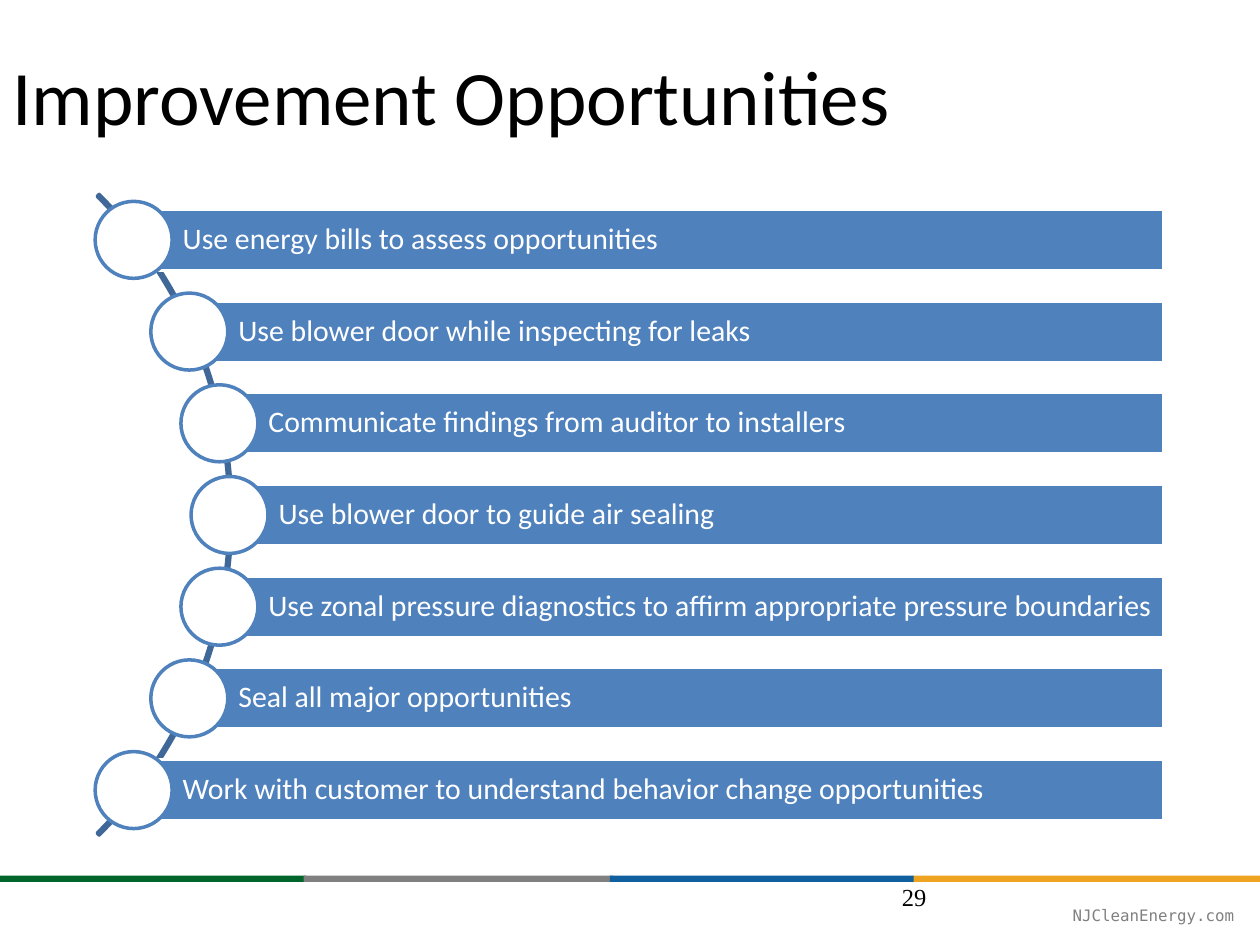
from pptx import Presentation
from pptx.dml.color import RGBColor
from pptx.enum.shapes import MSO_SHAPE
from pptx.enum.text import MSO_ANCHOR, PP_ALIGN
from pptx.util import Pt

RECT, OVAL, ARC = MSO_SHAPE.RECTANGLE, MSO_SHAPE.OVAL, MSO_SHAPE.BLOCK_ARC
TOP, MIDDLE = MSO_ANCHOR.TOP, MSO_ANCHOR.MIDDLE
LEFT, RIGHT = PP_ALIGN.LEFT, PP_ALIGN.RIGHT

TITLE = "Improvement Opportunities"
STEPS = [
    "Use energy bills to assess opportunities",
    "Use blower door while inspecting for leaks",
    "Communicate findings from auditor to installers",
    "Use blower door to guide air sealing",
    "Use zonal pressure diagnostics to affirm appropriate pressure boundaries",
    "Seal all major opportunities",
    "Work with customer to understand behavior change opportunities",
]
STRIPES = [("00652A", 0, 175), ("808080", 173.5, 177),
           ("105F9E", 348.5, 174), ("EEA420", 522, 198)]
WEBSITE = "NJCleanEnergy.com"
PAGE_NUMBER = "29"

BLUE, ARC_BLUE, WHITE = "4F81BD", "3F6797", "FFFFFF"
BAR_LEFT_BY_DISTANCE = [131.2, 125.4, 108.2, 76.4]
BAR_RIGHT, BAR_HEIGHT = 665.3, 35.2
FIRST_CENTER, STEP_PITCH = 137.1, 52.4
CIRCLE = 44


def color(hex_string):
    return RGBColor.from_string(hex_string)


def write(shape, text, size, font="Calibri", fill="000000", align=LEFT,
          anchor=TOP, insets=(7.2, 3.6, 7.2, 3.6), spacing=1.0):
    frame = shape.text_frame
    frame.word_wrap = True
    frame.vertical_anchor = anchor
    (frame.margin_left, frame.margin_top,
     frame.margin_right, frame.margin_bottom) = map(Pt, insets)
    paragraph = frame.paragraphs[0]
    paragraph.alignment = align
    paragraph.line_spacing = spacing
    run = paragraph.add_run()
    run.text = text
    run.font.size = Pt(size)
    run.font.name = font
    run.font.color.rgb = color(fill)


def draw(shapes, kind, box, fill=None, line=None):
    shape = shapes.add_shape(kind, *map(Pt, box))
    shape.shadow.inherit = False
    if fill:
        shape.fill.solid()
        shape.fill.fore_color.rgb = color(fill)
    else:
        shape.fill.background()
    if line:
        shape.line.color.rgb = color(line)
        shape.line.width = Pt(2)
    else:
        shape.line.fill.background()
    return shape


def add_steps(slide):
    diagram = slide.shapes.add_group_shape().shapes
    arc = draw(diagram, ARC, (-385.2, 35.3, 517.7, 517.7), line=ARC_BLUE)
    for index, angle_or_width in enumerate((189, 27, 0.003)):
        arc.adjustments[index] = angle_or_width
    middle = len(STEPS) // 2
    for index, step in enumerate(STEPS):
        left = BAR_LEFT_BY_DISTANCE[abs(index - middle)]
        center = FIRST_CENTER + index * STEP_PITCH
        bar = draw(diagram, RECT, (left, center - BAR_HEIGHT / 2,
                                   BAR_RIGHT - left, BAR_HEIGHT), BLUE, WHITE)
        write(bar, step, 17, fill=WHITE, anchor=MIDDLE,
              insets=(28, 3.4, 3.4, 3.4), spacing=0.9)
        draw(diagram, OVAL, (left - CIRCLE / 2, center - CIRCLE / 2,
                             CIRCLE, CIRCLE), WHITE, BLUE)


def main():
    deck = Presentation()
    deck.slide_width, deck.slide_height = Pt(720), Pt(540)
    slide = deck.slides.add_slide(deck.slide_layouts[5])

    for fill, left, width in STRIPES:
        draw(slide.shapes, RECT, (left, 500.4, width, 3.6), fill)
    website = slide.shapes.add_textbox(Pt(-15), Pt(515.5), Pt(720), Pt(12.2))
    write(website, WEBSITE, 9, font="DejaVu Sans Mono", fill="808080",
          align=RIGHT, insets=(0, 0, 0, 0), spacing=1.2)

    title = slide.shapes.title
    title.left, title.top = Pt(0), Pt(24)
    title.width, title.height = Pt(620.6), Pt(104.4)
    write(title, TITLE, 44)

    add_steps(slide)
    page = slide.shapes.add_textbox(Pt(508.3), Pt(500.4), Pt(162), Pt(28.8))
    write(page, PAGE_NUMBER, 14, font="Times New Roman")
    deck.save("out.pptx")


if __name__ == "__main__":
    main()
